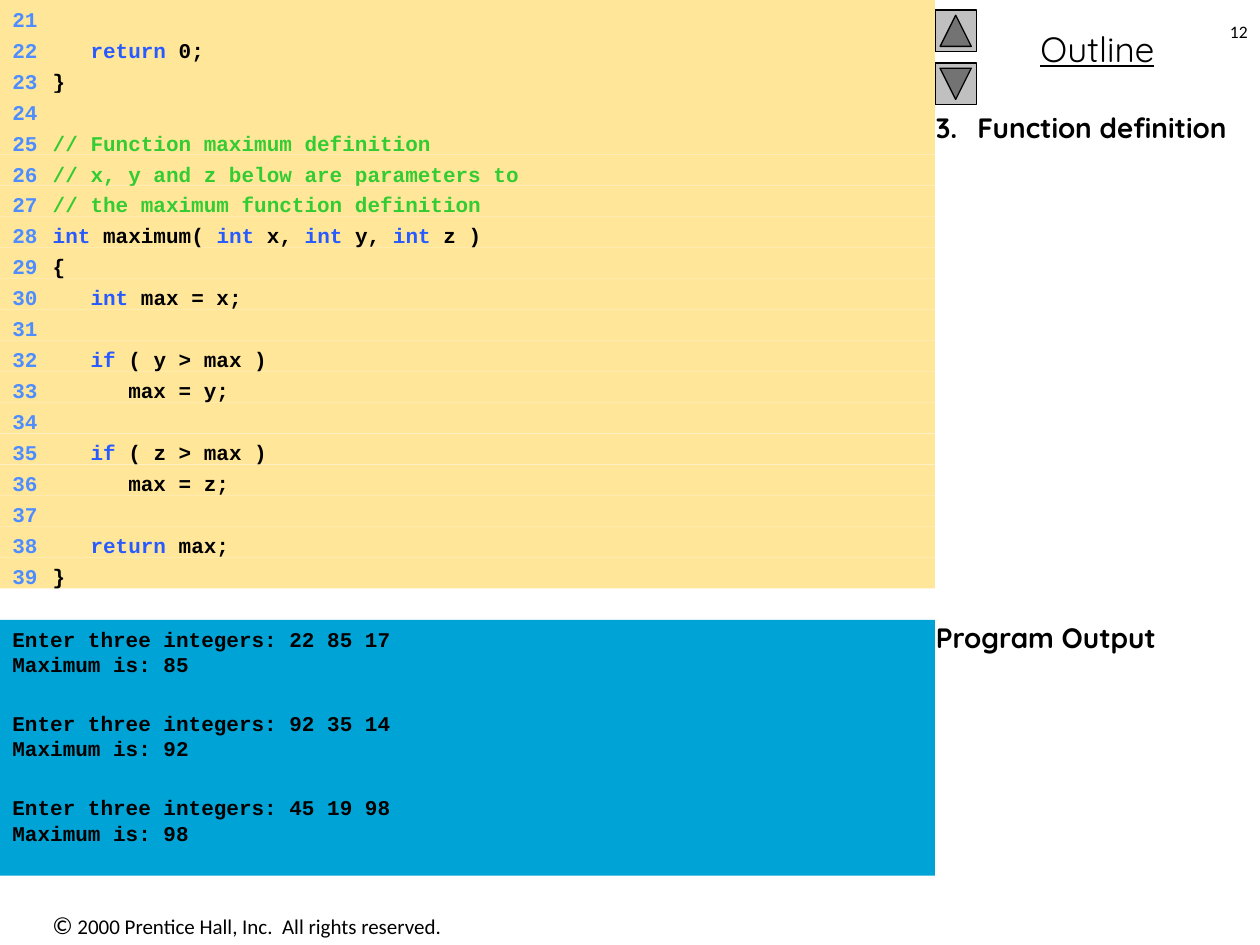
import itertools
from dataclasses import dataclass

import pptx
import pptx.dml.color
import pptx.enum.shapes
import pptx.enum.text
import pptx.oxml
import pptx.oxml.ns
import pptx.util

Inches = pptx.util.Inches
Pt = pptx.util.Pt
Shape = pptx.enum.shapes.MSO_SHAPE
Align = pptx.enum.text.PP_ALIGN
Anchor = pptx.enum.text.MSO_ANCHOR


@dataclass(frozen=True)
class Theme:
    ink: str = "000000"
    code_fill: str = "FFE699"
    output_fill: str = "00A3D6"
    button_fill: str = "C0C0C0"
    line_number: str = "4D8DFF"
    keyword: str = "275AFF"
    comment: str = "33CC33"
    body_font: str = "Calibri"
    code_font: str = "Courier New"
    heading_font: str = "Quicksand"
    title_size: int = 20
    heading_size: int = 16
    symbol_size: int = 14
    text_size: int = 12
    number_size: int = 10


THEME = Theme()
KEYWORDS = {"int", "if", "return"}
FIRST_LINE = 21
CODE = """
   return 0;
}

// Function maximum definition
// x, y and z below are parameters to
// the maximum function definition
int maximum( int x, int y, int z )
{
   int max = x;

   if ( y > max )
      max = y;

   if ( z > max )
      max = z;

   return max;
}""".split("\n")
RUNS = [("22 85 17", 85), ("92 35 14", 92), ("45 19 98", 98)]


def rgb(value):
    return pptx.dml.color.RGBColor.from_string(value)


def add_span(para, text, font=THEME.body_font, size=THEME.text_size,
             color=THEME.ink, bold=False, underline=False):
    span = para.add_run()
    span.text = text
    span.font.name = font
    span.font.size = Pt(size)
    span.font.color.rgb = rgb(color)
    span.font.bold = bold
    span.font.underline = underline


def add_text_box(page, area, align=Align.LEFT, anchor=Anchor.TOP):
    frame = page.shapes.add_textbox(*area).text_frame
    frame.word_wrap = True
    frame.vertical_anchor = anchor
    frame.paragraphs[0].alignment = align
    return frame


def add_panel(shapes, area, fill):
    panel = shapes.add_shape(Shape.RECTANGLE, *area)
    panel.shadow.inherit = False
    panel.fill.solid()
    panel.fill.fore_color.rgb = rgb(fill)
    panel.line.fill.background()
    frame = panel.text_frame
    frame.word_wrap = True
    frame.vertical_anchor = Anchor.TOP
    frame.margin_top = Inches(0.05)
    frame.margin_bottom = 0
    frame.paragraphs[0].alignment = Align.LEFT
    return frame


def add_paragraph_xml(para, markup):
    namespace = pptx.oxml.ns.nsdecls("a")
    element = pptx.oxml.parse_xml(markup.replace(" ", f" {namespace} ", 1))
    para._p.get_or_add_pPr().append(element)


def add_code_tabs(para):
    add_paragraph_xml(
        para,
        f'<a:tabLst ><a:tab pos="{Inches(0.15)}" algn="r"/>'
        f'<a:tab pos="{Inches(0.32)}" algn="l"/></a:tabLst>')


def color_code(line):
    if line.startswith("//"):
        return [(THEME.comment, line)]
    words = ["".join(group) for _, group in itertools.groupby(line, str.isalnum)]
    by_color = itertools.groupby(
        words, lambda word: THEME.keyword if word in KEYWORDS else THEME.ink)
    return [(color, "".join(group)) for color, group in by_color]


def build_code(page, left, top, width, height):
    rows = page.shapes.add_group_shape().shapes
    pitch = height / len(CODE)
    for index, line in enumerate(CODE):
        area = (left, int(top + index * pitch), width, int(pitch))
        para = add_panel(rows, area, THEME.code_fill).paragraphs[0]
        add_code_tabs(para)
        number = (THEME.line_number, f"\t{FIRST_LINE + index}\t")
        for color, text in [number] + color_code(line):
            add_span(para, text, font=THEME.code_font, color=color, bold=True)


def build_output(page, left, top, width, height):
    pitch = Inches(0.67)
    panel_height = height - (len(RUNS) - 1) * pitch
    for index, (numbers, largest) in enumerate(RUNS):
        area = (left, top + index * pitch, width, panel_height)
        frame = add_panel(page.shapes, area, THEME.output_fill)
        answer = frame.add_paragraph()
        answer.alignment = Align.LEFT
        lines = (f"Enter three integers: {numbers}", f"Maximum is: {largest}")
        for para, text in zip(frame.paragraphs, lines):
            add_span(para, text, font=THEME.code_font, bold=True)


def build_buttons(page, left, top, size, pitch):
    buttons = page.shapes.add_group_shape().shapes
    for index, rotation in enumerate((90, 270)):
        button = buttons.add_shape(Shape.ACTION_BUTTON_BACK_OR_PREVIOUS,
                                   left, top + index * pitch, size, size)
        button.rotation = rotation
        button.shadow.inherit = False
        button.fill.solid()
        button.fill.fore_color.rgb = rgb(THEME.button_fill)
        button.line.color.rgb = rgb(THEME.ink)
        button.line.width = Pt(0.75)


def build_title(page, *area):
    title = add_text_box(page, area, align=Align.CENTER)
    add_span(title.paragraphs[0], "Outline", font=THEME.heading_font,
             size=THEME.title_size, underline=True)


def build_page_number(page, *area):
    number = add_text_box(page, area, align=Align.RIGHT, anchor=Anchor.MIDDLE)
    add_span(number.paragraphs[0], "12", size=THEME.number_size)


def build_outline(page, *area):
    frame = add_text_box(page, area)
    section = frame.paragraphs[0]
    properties = section._p.get_or_add_pPr()
    properties.set("marL", str(Inches(0.33)))
    properties.set("indent", str(-Inches(0.33)))
    add_paragraph_xml(section, '<a:buAutoNum type="arabicPeriod" startAt="3"/>')
    output = frame.add_paragraph()
    output.space_before = Pt(272)
    for para, text in ((section, "Function definition"), (output, "Program Output")):
        add_span(para, text, font=THEME.heading_font,
                 size=THEME.heading_size, bold=True)


def build_footer(page, *area):
    para = add_text_box(page, area, align=Align.CENTER).paragraphs[0]
    add_span(para, "©", size=THEME.symbol_size)
    add_span(para, " 2000 Prentice Hall, Inc.  All rights reserved.")


def main():
    deck = pptx.Presentation()
    deck.slide_width = Inches(10)
    deck.slide_height = Inches(7.5)
    page = deck.slides.add_slide(deck.slide_layouts[6])
    split = Inches(7.42)
    build_footer(page, 0, Inches(7.17), Inches(3.92), Inches(0.33))
    build_title(page, split, Inches(0.17), Inches(2.58), Inches(0.43))
    build_buttons(page, split, Inches(0.08), Inches(0.33), Inches(0.42))
    build_page_number(page, Inches(7.92), 0, Inches(2.08), Inches(0.5))
    build_outline(page, Inches(7.33), Inches(0.83), Inches(2.67), Inches(6.67))
    build_code(page, 0, 0, split, Inches(4.67))
    build_output(page, 0, Inches(4.92), split, Inches(2.03))
    deck.save("out.pptx")


if __name__ == "__main__":
    main()
